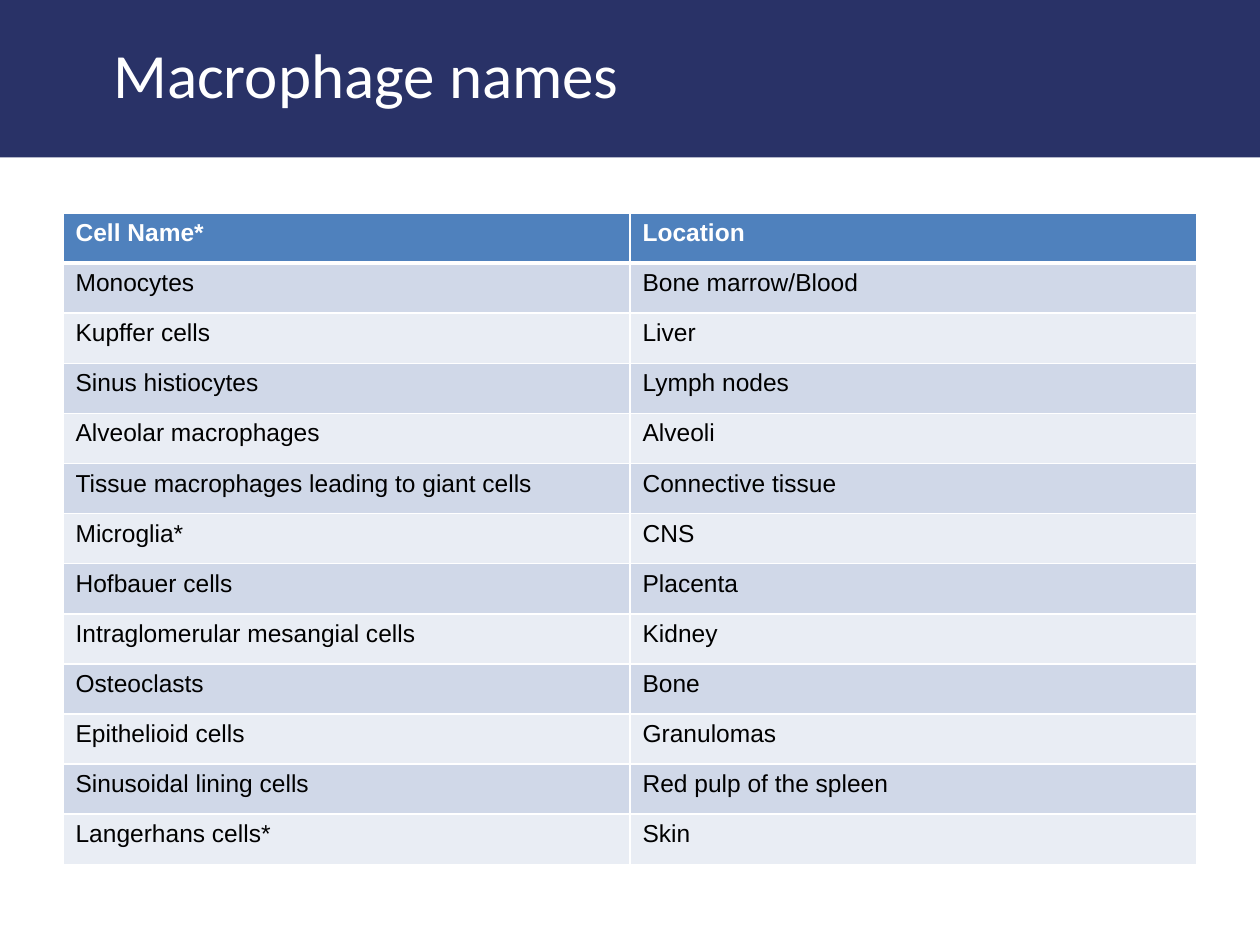
from lxml import etree
from pptx import Presentation
from pptx import util as u
from pptx.dml.color import RGBColor
from pptx.enum import shapes, text
from pptx.oxml import ns

TITLE = "Macrophage names"
HEADER = ("Cell Name*", "Location")
CELLS = [
    ("Monocytes", "Bone marrow/Blood"),
    ("Kupffer cells", "Liver"),
    ("Sinus histiocytes", "Lymph nodes"),
    ("Alveolar macrophages", "Alveoli"),
    ("Tissue macrophages leading to giant cells", "Connective tissue"),
    ("Microglia*", "CNS"),
    ("Hofbauer cells", "Placenta"),
    ("Intraglomerular mesangial cells", "Kidney"),
    ("Osteoclasts", "Bone"),
    ("Epithelioid cells", "Granulomas"),
    ("Sinusoidal lining cells", "Red pulp of the spleen"),
    ("Langerhans cells*", "Skin"),
]
NAVY, BLUE, WHITE, BLACK = "293267", "4F81BD", "FFFFFF", "000000"
STRIPES = ("D0D8E8", "E9EDF4")
TABLE_LEFT, TABLE_TOP, TABLE_WIDTH, TABLE_HEIGHT = 0.5, 1.69, 9, 5.17


def paint(fill, color):
    fill.solid()
    fill.fore_color.rgb = RGBColor.from_string(color)


def write(frame, content, size, font, color, bold=False):
    paragraph = frame.paragraphs[0]
    paragraph.alignment = text.PP_ALIGN.LEFT
    run = paragraph.add_run()
    run.text = content
    run.font.size = u.Pt(size)
    run.font.name = font
    run.font.bold = bold
    run.font.color.rgb = RGBColor.from_string(color)


def add_borders(cell, color, **widths):
    properties = cell._tc.get_or_add_tcPr()
    for side in "LRTB":
        line = etree.SubElement(properties, ns.qn(f"a:ln{side}"),
                                w=str(u.Pt(widths.get(side, 1))))
        fill = etree.SubElement(line, ns.qn("a:solidFill"))
        etree.SubElement(fill, ns.qn("a:srgbClr"), val=color)


def add_cell_table(slide):
    rows = [HEADER] + CELLS
    table = slide.shapes.add_table(
        len(rows), len(HEADER), u.Inches(TABLE_LEFT), u.Inches(TABLE_TOP),
        u.Inches(TABLE_WIDTH), u.Inches(TABLE_HEIGHT)).table
    for row_index, row in enumerate(rows):
        table.rows[row_index].height = u.Inches(TABLE_HEIGHT / len(rows))
        is_header = row_index == 0
        widths = {0: {"B": 3}, 1: {"T": 3}}.get(row_index, {})
        for column_index, content in enumerate(row):
            cell = table.cell(row_index, column_index)
            add_borders(cell, WHITE, **widths)
            paint(cell.fill, BLUE if is_header else STRIPES[(row_index - 1) % 2])
            write(cell.text_frame, content, 14, "Arial",
                  WHITE if is_header else BLACK, bold=is_header)


def add_title_band(slide, width):
    band = slide.shapes.add_shape(
        shapes.MSO_SHAPE.RECTANGLE, 0, 0, width, u.Inches(1.25))
    band.shadow.inherit = False
    paint(band.fill, NAVY)
    band.line.fill.background()

    title = slide.shapes.title
    title.left, title.top = u.Inches(0.8), u.Inches(0.23)
    title.width, title.height = u.Inches(6.08), u.Inches(0.71)
    frame = title.text_frame
    frame.word_wrap = True
    frame.auto_size = text.MSO_AUTO_SIZE.SHAPE_TO_FIT_TEXT
    frame.vertical_anchor = text.MSO_ANCHOR.TOP
    write(frame, TITLE, 36, "Calibri", WHITE)
    slide.shapes.element.append(title.element)


def main():
    presentation = Presentation()
    presentation.slide_width = u.Inches(10)
    presentation.slide_height = u.Inches(7.5)
    slide = presentation.slides.add_slide(presentation.slide_layouts[5])
    add_cell_table(slide)
    add_title_band(slide, presentation.slide_width)
    presentation.save("out.pptx")


if __name__ == "__main__":
    main()
